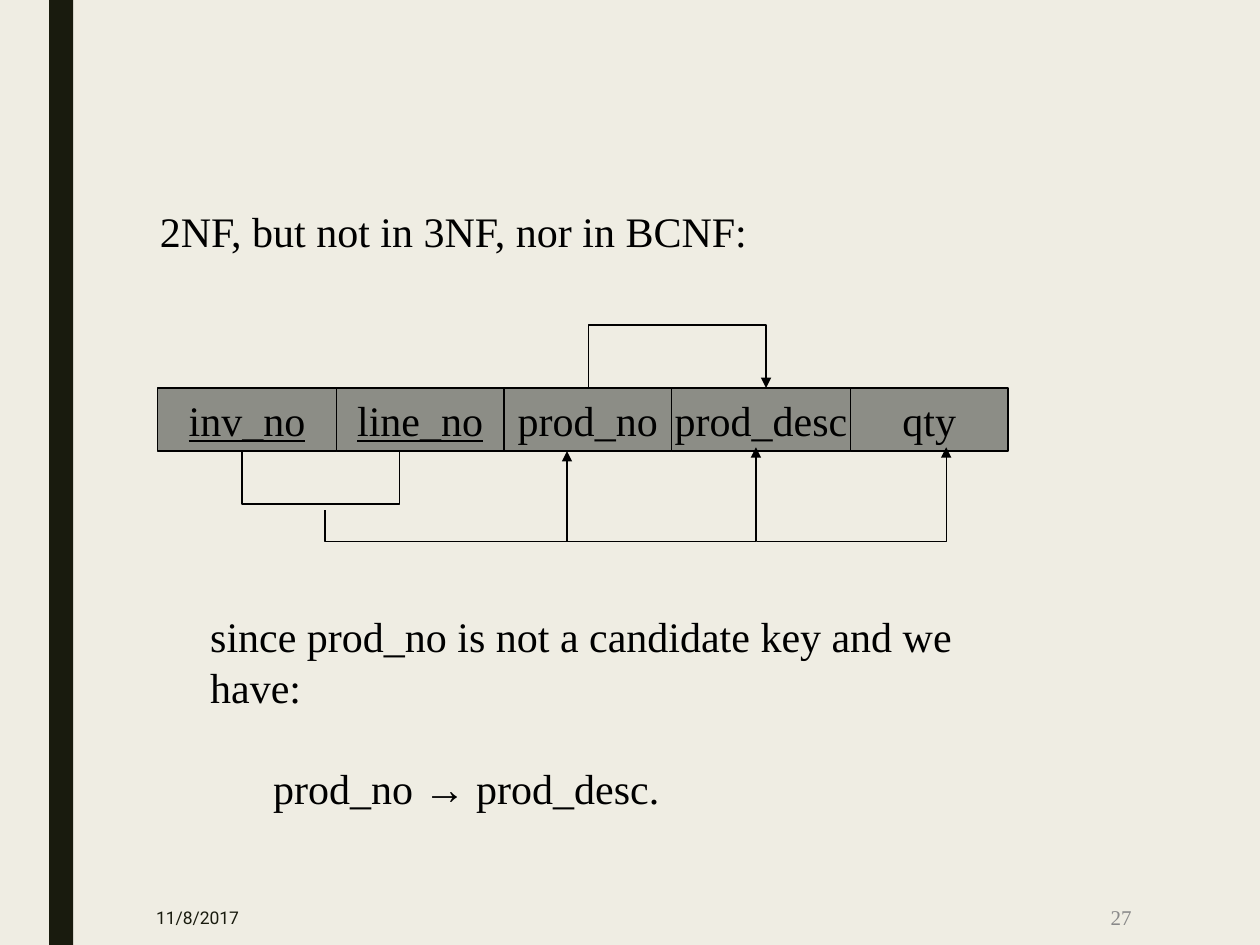
import pptx
import pptx.dml.color
import pptx.enum.shapes
import pptx.enum.text
import pptx.oxml
import pptx.oxml.ns
import pptx.util

Inches = pptx.util.Inches
Pt = pptx.util.Pt
RGBColor = pptx.dml.color.RGBColor
ALIGN = pptx.enum.text.PP_ALIGN
ANCHOR = pptx.enum.text.MSO_ANCHOR

BACKGROUND = RGBColor(0xEF, 0xED, 0xE3)
DARK = RGBColor(0x19, 0x1B, 0x0E)
CELL_GRAY = RGBColor(0x8C, 0x8D, 0x86)
BLACK = RGBColor(0, 0, 0)
NUMBER_GRAY = RGBColor(0x89, 0x89, 0x89)

BODY = {"name": "Times New Roman", "size": Pt(24), "color": BLACK}
KEY = {**BODY, "underline": True}
DATE = {"name": "Roboto", "size": Pt(10), "color": DARK}
NUMBER = {"name": "Times New Roman", "size": Pt(12), "color": NUMBER_GRAY}

ROW_TOP, ROW_HEIGHT = 3.08, 0.5
ROW_BOTTOM = ROW_TOP + ROW_HEIGHT
BUS = 4.3
ATTRIBUTES = [
    ("inv_no", 1.42, KEY),
    ("line_no", 1.33, KEY),
    ("prod_no", 1.33, BODY),
    ("prod_desc", 1.42, BODY),
    ("qty", 1.25, BODY),
]
KEY_BRACKET = [(1.92, ROW_BOTTOM), (1.92, 4), (3.17, 4), (3.17, ROW_BOTTOM)]
DEPENDENCIES = [
    [(2.58, 4.05), (2.58, BUS), (4.5, BUS), (4.5, ROW_BOTTOM)],
    [(4.5, BUS), (6, BUS), (6, 3.55)],
    [(6.01, BUS), (7.51, BUS), (7.51, 3.55)],
    [(4.67, ROW_TOP), (4.67, 2.58), (6.08, 2.58), (6.08, ROW_TOP)],
]


def write_paragraph(paragraph, text, style, alignment=ALIGN.LEFT):
    paragraph.alignment = alignment
    run = paragraph.add_run()
    run.text = text
    for attribute, value in style.items():
        if attribute == "color":
            run.font.color.rgb = value
        else:
            setattr(run.font, attribute, value)


def add_text(slide, box, lines, style, alignment=ALIGN.LEFT, **frame_format):
    shape = slide.shapes.add_textbox(*map(Inches, box))
    frame = shape.text_frame
    for attribute, value in {"word_wrap": True, **frame_format}.items():
        setattr(frame, attribute, value)
    write_paragraph(frame.paragraphs[0], lines[0], style, alignment)
    for line in lines[1:]:
        paragraph = frame.add_paragraph()
        paragraph.space_before = Pt(29)
        write_paragraph(paragraph, line, style, alignment)


def add_rectangle(slide, box, color):
    shape = slide.shapes.add_shape(
        pptx.enum.shapes.MSO_SHAPE.RECTANGLE, *map(Inches, box)
    )
    shape.shadow.inherit = False
    shape.fill.solid()
    shape.fill.fore_color.rgb = color
    shape.line.fill.background()
    return shape


def outline(shape):
    shape.line.color.rgb = BLACK
    shape.line.width = Pt(0.75)


def add_attribute_row(slide):
    left = 1.25
    for name, width, style in ATTRIBUTES:
        cell = add_rectangle(slide, (left, ROW_TOP, width, ROW_HEIGHT), CELL_GRAY)
        outline(cell)
        cell.text_frame.word_wrap = False
        cell.text_frame.vertical_anchor = ANCHOR.MIDDLE
        write_paragraph(cell.text_frame.paragraphs[0], name, style, ALIGN.CENTER)
        left += width


def add_path(slide, points, arrow=False):
    start, *rest = [(Inches(x), Inches(y)) for x, y in points]
    builder = slide.shapes.build_freeform(*start)
    builder.add_line_segments(rest, close=False)
    shape = builder.convert_to_shape()
    shape.shadow.inherit = False
    shape.fill.background()
    outline(shape)
    if arrow:
        line = shape.line._get_or_add_ln()
        tail = pptx.oxml.parse_xml(
            f'<a:tailEnd {pptx.oxml.ns.nsdecls("a")} type="triangle"/>'
        )
        line.append(tail)


def main():
    presentation = pptx.Presentation()
    presentation.slide_width = Inches(10)
    presentation.slide_height = Inches(7.5)
    slide = presentation.slides.add_slide(presentation.slide_layouts[6])
    slide.background.fill.solid()
    slide.background.fill.fore_color.rgb = BACKGROUND

    add_rectangle(slide, (0.39, 0, 0.19, 7.5), DARK)
    add_text(slide, (1.17, 1.58, 4.91, 0.5),
             ["2NF, but not in 3NF, nor in BCNF:"], BODY, word_wrap=False)
    add_attribute_row(slide)
    add_path(slide, KEY_BRACKET)
    for points in DEPENDENCIES:
        add_path(slide, points, arrow=True)
    add_text(slide, (1.57, 4.8, 6.6, 1.7),
             ["since prod_no is not a candidate key and we have:",
              "\tprod_no → prod_desc."], BODY)
    add_text(slide, (1.14, 7.06, 0.99, 0.44), ["11/8/2017"], DATE,
             vertical_anchor=ANCHOR.MIDDLE)
    add_text(slide, (7.77, 7.06, 1.31, 0.44), ["27"], NUMBER, ALIGN.RIGHT,
             vertical_anchor=ANCHOR.MIDDLE)
    presentation.save("out.pptx")


if __name__ == "__main__":
    main()
